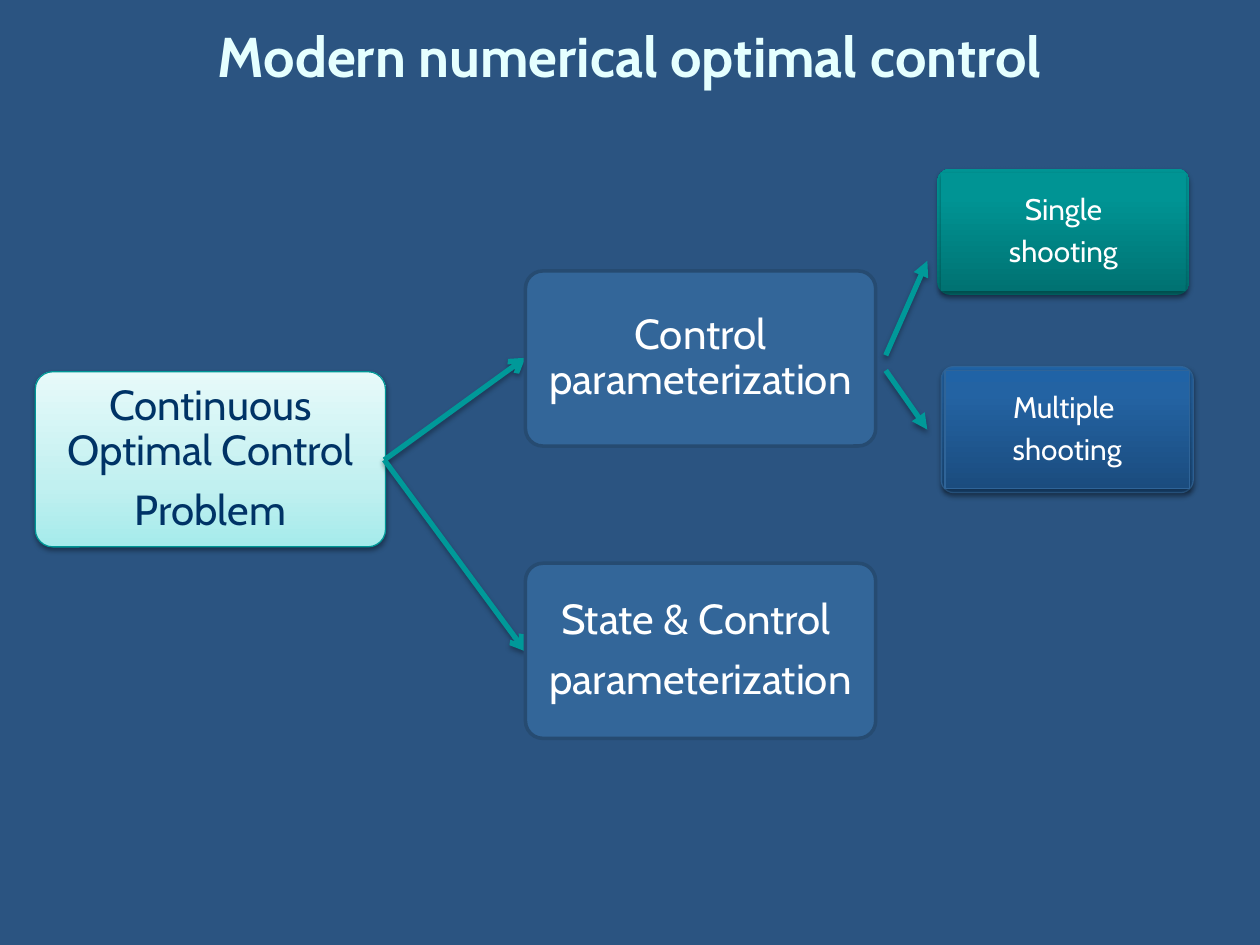
import pptx
import pptx.dml.color
import pptx.enum.shapes
import pptx.enum.text
import pptx.oxml
import pptx.oxml.ns
import pptx.util

Inches = pptx.util.Inches
Pt = pptx.util.Pt
SHAPE = pptx.enum.shapes.MSO_SHAPE
FONT = "Cabin"
COLORS = {
    "background": "2B5481",
    "title": "E5FFFF",
    "navy": "003366",
    "white": "FFFFFF",
    "arrow": "009999",
    "problem_edge": "009696",
    "method": "336699",
    "method_edge": "264B71",
    "multiple_edge": "2F6498",
    "shadow": "000000",
}
GRADIENTS = {
    "problem": [(0, "A5EBEB"), (35, "C1F0F0"), (100, "E7FAFA")],
    "single": [(0, "007272"), (80, "009494"), (100, "009595")],
    "multiple": [(0, "1B4C7E"), (80, "2363A3"), (100, "2063A6")],
}


def color(name):
    return pptx.dml.color.RGBColor.from_string(COLORS[name])


def add_element(parent, tag, **attributes):
    element = pptx.oxml.ns.qn(tag)
    child = parent.makeelement(element, attributes)
    parent.append(child)
    return child


def add_shadow(properties, opacity=35, distance=1.8):
    effects = properties.find(pptx.oxml.ns.qn("a:effectLst"))
    if effects is None:
        effects = add_element(properties, "a:effectLst")
    shadow = add_element(effects, "a:outerShdw", blurRad=str(Pt(3.1)),
                         dist=str(Pt(distance)), dir="5400000", rotWithShape="0")
    tint = add_element(shadow, "a:srgbClr", val=COLORS["shadow"])
    add_element(tint, "a:alpha", val=str(opacity * 1000))


def fill_gradient(panel, stops):
    panel.fill.gradient()
    panel.fill.gradient_angle = 90
    stop_list = next(panel.fill._xPr.iter(pptx.oxml.ns.qn("a:gsLst")))
    for stop in list(stop_list):
        stop_list.remove(stop)
    for position, tint in stops:
        stop = add_element(stop_list, "a:gs", pos=str(position * 1000))
        add_element(stop, "a:srgbClr", val=tint)


def add_panel(slide, kind, box, fill, edge=None, edge_width=0.75):
    panel = slide.shapes.add_shape(kind, *map(Inches, box))
    panel.shadow.inherit = False
    if kind == SHAPE.ROUNDED_RECTANGLE:
        panel.adjustments[0] = 0.1
    if fill in GRADIENTS:
        fill_gradient(panel, GRADIENTS[fill])
    else:
        panel.fill.solid()
        panel.fill.fore_color.rgb = color(fill)
    if edge:
        panel.line.color.rgb = color(edge)
        panel.line.width = Pt(edge_width)
    else:
        panel.line.fill.background()
    return panel


def write_label(holder, lines, size, ink, inset):
    frame = holder.text_frame
    frame.word_wrap = True
    frame.vertical_anchor = pptx.enum.text.MSO_ANCHOR.MIDDLE
    frame.margin_left = frame.margin_right = Inches(inset)
    frame.margin_top = frame.margin_bottom = Inches(inset)
    for index, line in enumerate(lines):
        paragraph = frame.paragraphs[0] if index == 0 else frame.add_paragraph()
        paragraph.alignment = pptx.enum.text.PP_ALIGN.CENTER
        paragraph.line_spacing = 0.9
        paragraph.space_after = Pt(round(size * 0.35, 1))
        add_run(paragraph, line, size, ink)


def add_run(paragraph, text, size, ink, bold=False):
    run = paragraph.add_run()
    run.text = text
    run.font.name = FONT
    run.font.size = Pt(size)
    run.font.bold = bold
    run.font.color.rgb = color(ink)


def add_node(slide, left, top, lines, fill, ink, edge, edge_width):
    width, height, gap = 2.78, 1.39, 0.04
    panel = add_panel(slide, SHAPE.ROUNDED_RECTANGLE, (left, top, width, height),
                      fill, edge, edge_width)
    label = slide.shapes.add_textbox(
        Inches(left + gap), Inches(top + gap),
        Inches(width - 2 * gap), Inches(height - 2 * gap))
    write_label(label, lines, 24, ink, 0.02)
    return panel


def add_shooting(slide, left, top, lines, fill, edge=None):
    width, height, gap = 2, 1, 0.03
    outer = add_panel(slide, SHAPE.ROUNDED_RECTANGLE, (left, top, width, height), fill, edge)
    inner_box = (left + gap, top + gap, width - 2 * gap, height - 2 * gap)
    inner = add_panel(slide, SHAPE.RECTANGLE, inner_box, fill, edge)
    for panel in (outer, inner):
        add_shadow(panel._element.spPr)
    write_label(inner, lines, 17, "white", 0.01)


def add_arrow(slide, start, end, head):
    arrow = slide.shapes.add_connector(
        pptx.enum.shapes.MSO_CONNECTOR.STRAIGHT, *map(Inches, start + end))
    arrow.line.color.rgb = color("arrow")
    arrow.line.width = Pt(3)
    add_element(arrow.line._get_or_add_ln(), "a:tailEnd", type=head)
    add_shadow(arrow._element.spPr)


def add_title(slide, text):
    title = slide.shapes.add_textbox(Inches(0.5), Inches(0.12), Inches(9), Inches(1.5))
    title.text_frame.word_wrap = True
    paragraph = title.text_frame.paragraphs[0]
    paragraph.alignment = pptx.enum.text.PP_ALIGN.CENTER
    add_run(paragraph, text, 32, "title", bold=True)


def main():
    deck = pptx.Presentation()
    deck.slide_width, deck.slide_height = Inches(10), Inches(7.5)
    slide = deck.slides.add_slide(deck.slide_layouts[6])
    slide.background.fill.solid()
    slide.background.fill.fore_color.rgb = color("background")

    problem = add_node(slide, 0.28, 2.95, ["Continuous Optimal Control", "Problem"],
                       "problem", "navy", "problem_edge", 0.75)
    add_shadow(problem._element.spPr, opacity=38, distance=1.6)

    methods = [
        (2.15, 2.84, ["Control parameterization"]),
        (4.47, 5.17, ["State & Control ", "parameterization"]),
    ]
    for top, middle, lines in methods:
        add_arrow(slide, (3.05, 3.65), (4.17, middle), "arrow")
        add_node(slide, 4.17, top, lines, "method", "white", "method_edge", 2)

    add_shooting(slide, 7.44, 1.34, ["Single", "shooting"], "single")
    add_shooting(slide, 7.47, 2.91, ["Multiple ", "shooting"], "multiple", "multiple_edge")
    for start_y, end_y in ((2.82, 2.07), (2.94, 3.41)):
        add_arrow(slide, (7.03, start_y), (7.36, end_y), "triangle")

    add_title(slide, "Modern numerical optimal control")
    deck.save("out.pptx")


if __name__ == "__main__":
    main()
